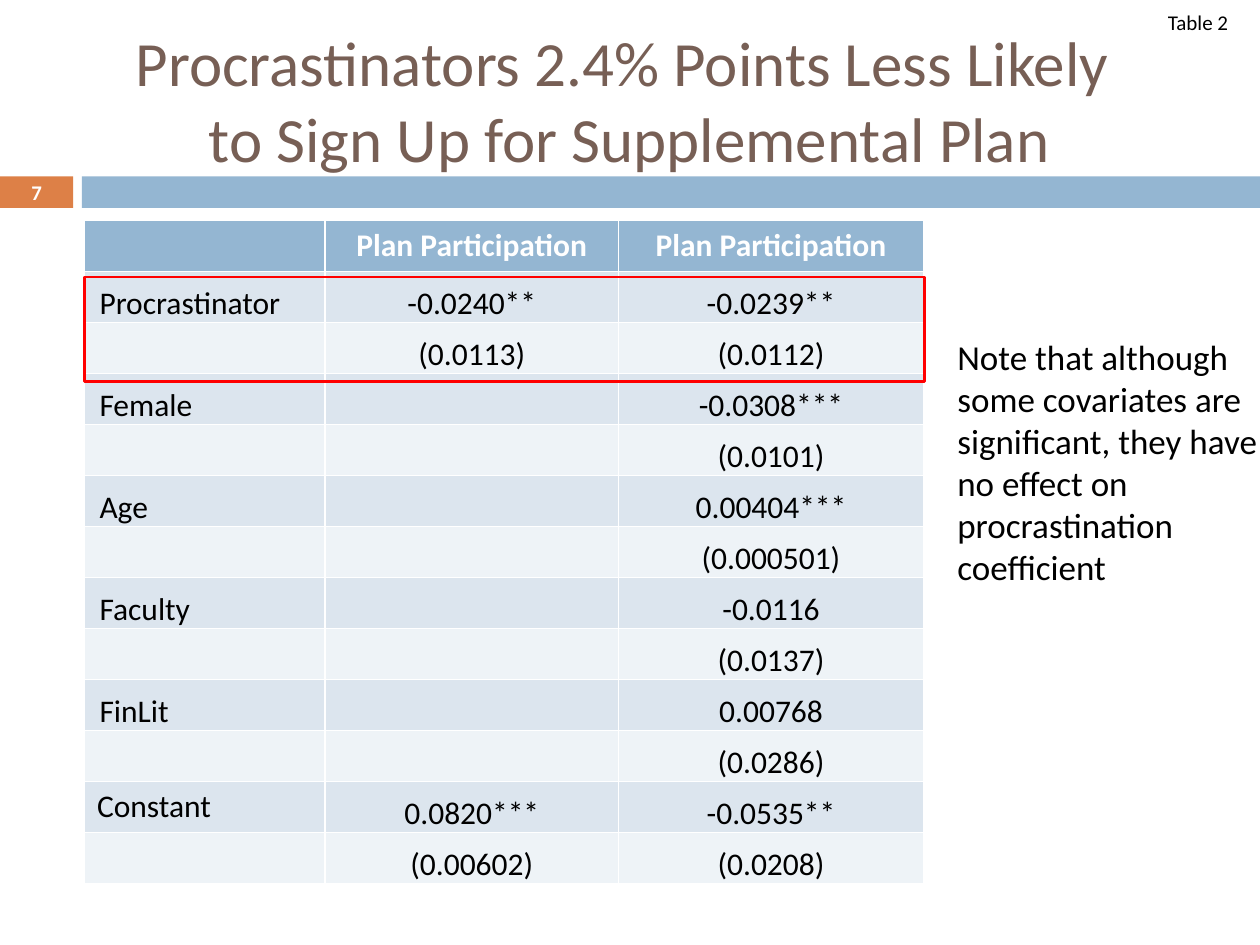
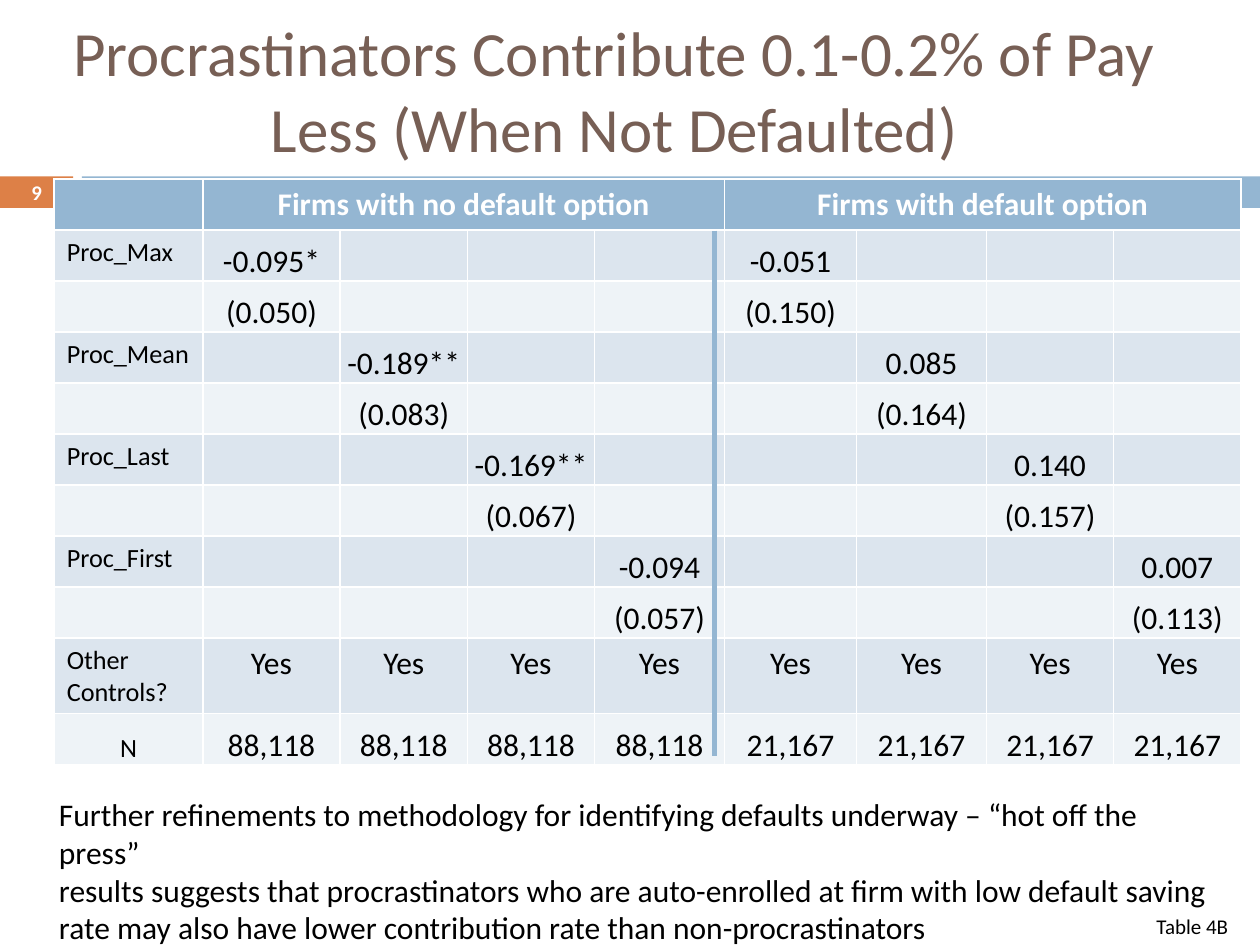
import pptx
import pptx.dml.color
import pptx.enum.shapes
import pptx.enum.text
import pptx.util
from lxml import etree

BROWN, ORANGE, BLUE = "775F55", "DD8047", "94B6D2"
DARK_BAND, LIGHT_BAND = "DCE5EE", "EEF3F7"
BLACK, WHITE, RED = "000000", "FFFFFF", "FF0000"
LEFT, CENTER = pptx.enum.text.PP_ALIGN.LEFT, pptx.enum.text.PP_ALIGN.CENTER
MIDDLE, BOTTOM = pptx.enum.text.MSO_ANCHOR.MIDDLE, pptx.enum.text.MSO_ANCHOR.BOTTOM
RECTANGLE = pptx.enum.shapes.MSO_SHAPE.RECTANGLE


def paint(fill, hex_colour):
    fill.solid()
    fill.fore_color.rgb = pptx.dml.color.RGBColor.from_string(hex_colour)


def write(frame, text, size, hex_colour=BLACK, align=LEFT, bold=False):
    """Put text in a frame and give every run the same look."""
    frame.text = text
    for paragraph in frame.paragraphs:
        paragraph.alignment = align
        for run in paragraph.runs:
            run.font.name = "Calibri"
            run.font.size = pptx.util.Pt(size)
            run.font.bold = bold
            paint(run.font.fill, hex_colour)


deck = pptx.Presentation()
deck.slide_width, deck.slide_height = pptx.util.Inches(10), pptx.util.Inches(7.5)
# The slide is a grid of 100 columns by 75 rows of square units.
UNIT = deck.slide_width // 100

# Estimates sit above their standard errors.
participation = [["", "Plan Participation", "Plan Participation"]]
for covariate, alone, alone_error, full, full_error in [
    ("Procrastinator", "-0.0240**", "(0.0113)", "-0.0239**", "(0.0112)"),
    ("Female", "", "", "-0.0308***", "(0.0101)"),
    ("Age", "", "", "0.00404***", "(0.000501)"),
    ("Faculty", "", "", "-0.0116", "(0.0137)"),
    ("FinLit", "", "", "0.00768", "(0.0286)"),
    ("Constant", "0.0820***", "(0.00602)", "-0.0535**", "(0.0208)"),
]:
    participation += [[covariate, alone, full], ["", alone_error, full_error]]

# Each measure enters one model per group of firms, so values run diagonally.
measures = [
    ("Proc_Max", "-0.095*", "(0.050)", "-0.051", "(0.150)"),
    ("Proc_Mean", "-0.189**", "(0.083)", "0.085", "(0.164)"),
    ("Proc_Last", "-0.169**", "(0.067)", "0.140", "(0.157)"),
    ("Proc_First", "-0.094", "(0.057)", "0.007", "(0.113)"),
]
models = len(measures)
contribution = [[""] * (1 + 2 * models)]
contribution[0][1] = "Firms with no default option"
contribution[0][1 + models] = "Firms with default option"
for model, (measure, *results) in enumerate(measures, start=1):
    estimates, errors = [measure] + [""] * 2 * models, [""] * (1 + 2 * models)
    estimates[model], errors[model], estimates[model + models], errors[model + models] = results
    contribution += [estimates, errors]
contribution.append(["Other Controls?"] + ["Yes"] * 2 * models)
contribution.append(["N"] + ["88,118"] * models + ["21,167"] * models)

roomy_texts = {"Constant", "Other Controls?", "Yes"} | {measure[0] for measure in measures}

pages = [
    {
        "number": "7",
        "title": ("Procrastinators 2.4% Points Less Likely \vto Sign Up for Supplemental Plan",
                  (0.8, 2.5, 98.3, 10.8)),
        "rows": participation, "corner": (6.7, 17.5), "label_size": 18,
        "columns": [19.1, 23.3, 24.2],
        "notes": [
            ("Table 2", 12, False, (91.7, 0.3, 7.1, 3)),
            ("Note that although\nsome covariates are\nsignificant, they have\n"
             "no effect on\nprocrastination\ncoefficient", 20, False, (75, 26.1, 26, 21.2)),
        ],
    },
    {
        "number": "9",
        "title": ("Procrastinators Contribute 0.1-0.2% of Pay\vLess (When Not Defaulted)",
                  (0.8, 1.7, 95.9, 10.8)),
        "rows": contribution, "corner": (4.3, 14.2), "label_size": 15,
        "columns": [11.8, 10.9, 10.1, 10.1, 10.3, 10.5, 10.3, 10.1, 10.1],
        "notes": [
            ("Further refinements to methodology for identifying defaults underway – “hot off the press”\n"
             "results suggests that procrastinators who are auto-enrolled at firm with low default saving\n"
             "rate may also have lower contribution rate than non-procrastinators",
             18, True, (3.7, 62.6, 93.3, 10.1)),
            ("Table 4B", 12, False, (90.8, 72, 7.9, 3)),
        ],
    },
]

ROW_HEIGHT = round(4.05 * UNIT)
slides, tables = [], []
for page in pages:
    slide = deck.slides.add_slide(deck.slide_layouts[6])
    slides.append(slide)

    for box, colour in [((0, 14, 5.8, 2.5), ORANGE), ((6.5, 14, 93.5, 2.5), BLUE)]:
        band = slide.shapes.add_shape(RECTANGLE, *[round(n * UNIT) for n in box])
        band.shadow.inherit = False
        band.line.fill.background()
        paint(band.fill, colour)
        if colour == ORANGE:
            number = band.text_frame
            number.margin_top = number.margin_bottom = 0
            number.vertical_anchor = MIDDLE
            write(number, page["number"], 11.9, WHITE, CENTER, True)

    heading, box = page["title"]
    title = slide.shapes.add_textbox(*[round(n * UNIT) for n in box]).text_frame
    title.word_wrap = True
    title.vertical_anchor = MIDDLE
    write(title, heading, 36, BROWN, CENTER)

    rows, columns = page["rows"], page["columns"]
    left, top = [round(n * UNIT) for n in page["corner"]]
    table = slide.shapes.add_table(len(rows), len(columns), left, top,
                                   round(sum(columns) * UNIT), ROW_HEIGHT * len(rows)).table
    tables.append(table)
    for column, width in zip(table.columns, columns):
        column.width = round(width * UNIT)
    for r, values in enumerate(rows):
        table.rows[r].height = ROW_HEIGHT
        for c, value in enumerate(values):
            cell = table.cell(r, c)
            paint(cell.fill, BLUE if r == 0 else DARK_BAND if r % 2 else LIGHT_BAND)
            if not value:
                continue
            align = CENTER if c or value == "N" else LEFT
            size = 18 if c else page["label_size"]
            write(cell.text_frame, value, size, BLACK if r else WHITE, align, r == 0)
            if r and value not in roomy_texts:
                cell.vertical_anchor = BOTTOM
                cell.margin_left = round((0.1 if align == CENTER else 1.2) * UNIT)
                cell.margin_right = cell.margin_top = round(0.1 * UNIT)
                cell.margin_bottom = 0

    for text, size, wraps, box in page["notes"]:
        note = slide.shapes.add_textbox(*[round(n * UNIT) for n in box]).text_frame
        note.word_wrap = wraps
        write(note, text, size)

for first in (1, 1 + models):
    tables[1].cell(0, first).merge(tables[1].cell(0, first + models - 1))

highlight = slides[0].shapes.add_shape(
    RECTANGLE, *[round(n * UNIT) for n in (6.7, 22, 66.7, 8.3)])
highlight.shadow.inherit = False
highlight.fill.background()
highlight.line.width = pptx.util.Pt(1.5)
paint(highlight.line.fill, RED)

divider = slides[1].shapes.add_connector(
    pptx.enum.shapes.MSO_CONNECTOR.STRAIGHT,
    *[round(n * UNIT) for n in (56.7, 18.3, 56.7, 60)])
divider.line.width = pptx.util.Pt(2.5)
paint(divider.line.fill, BLUE)
etree.SubElement(divider._element.spPr,
                 "{http://schemas.openxmlformats.org/drawingml/2006/main}effectLst")

deck.save("out.pptx")
